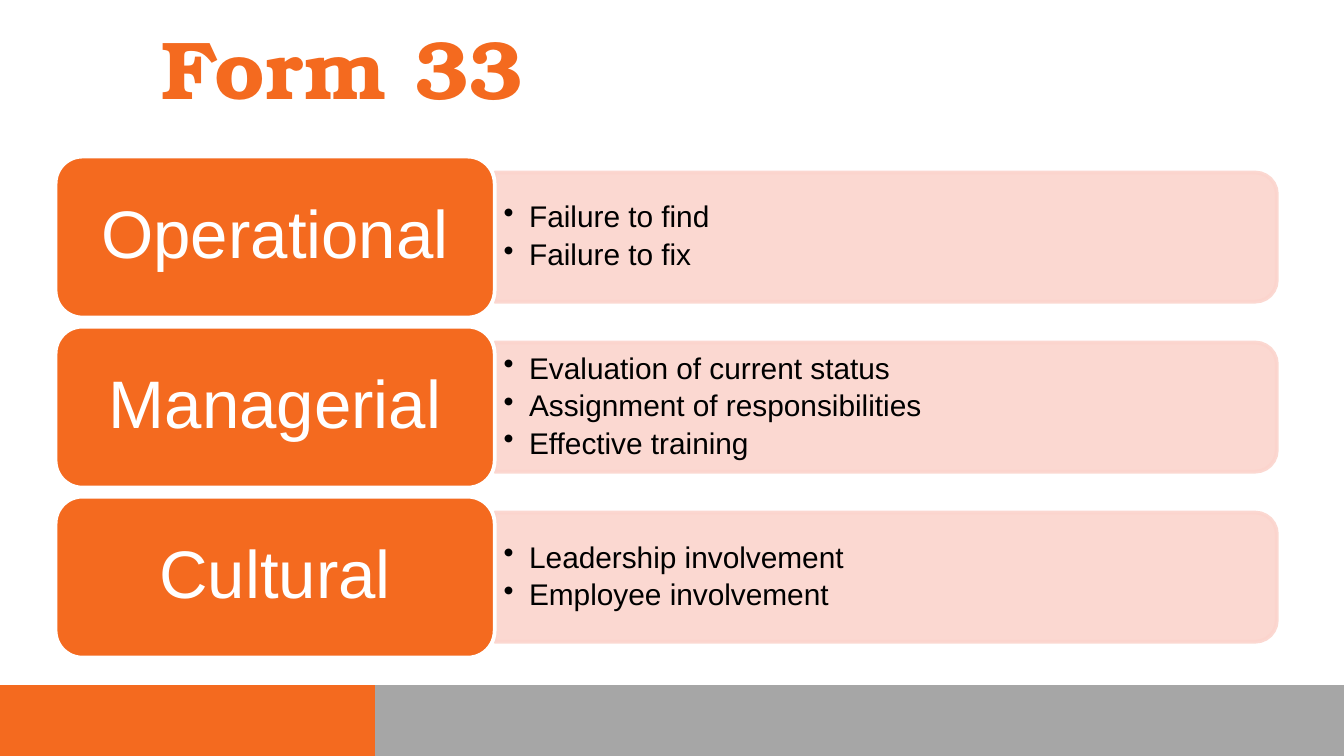
from dataclasses import dataclass

from lxml import etree
from pptx import Presentation
from pptx.dml.color import RGBColor
from pptx.enum.shapes import MSO_SHAPE
from pptx.enum.text import MSO_ANCHOR, PP_ALIGN
from pptx.oxml.ns import qn
from pptx.util import Pt

RECTANGLE = MSO_SHAPE.RECTANGLE
ROUNDED = MSO_SHAPE.ROUNDED_RECTANGLE
ROUNDED_END = MSO_SHAPE.ROUND_2_SAME_RECTANGLE
TOP, MIDDLE = MSO_ANCHOR.TOP, MSO_ANCHOR.MIDDLE
LEFT, CENTER = PP_ALIGN.LEFT, PP_ALIGN.CENTER


@dataclass(frozen=True)
class Theme:
    orange: str = "F46A1F"
    gray: str = "A6A6A6"
    pink: str = "FBD4CD"
    white: str = "FFFFFF"
    black: str = "000000"
    title_font: str = "TeX Gyre Bonum"
    body_font: str = "Arial"
    title_size: int = 44
    label_size: int = 36
    detail_size: int = 16


THEME = Theme()
TITLE = "Form 33"
CATEGORIES = [
    ("Operational", ["Failure to find", "Failure to fix"]),
    ("Managerial", ["Evaluation of current status",
                    "Assignment of responsibilities",
                    "Effective training"]),
    ("Cultural", ["Leadership involvement", "Employee involvement"]),
]

SLIDE_WIDTH, SLIDE_HEIGHT = 720, 405
FOOTER_TOP, FOOTER_SPLIT = 367, 200.9
LABEL_LEFT, LABEL_WIDTH, LABEL_HEIGHT = 29.8, 235.2, 86.2
FIRST_TOP, ROW_PITCH = 83.9, 91.1
PANEL_WIDTH, PANEL_HEIGHT = 419, 69.2
DETAIL_WIDTH, DETAIL_HEIGHT = 415.4, 62.4
BULLET_INDENT = 13.7


def add_block(slide, kind, left, top, width, height, fill, line=None):
    block = slide.shapes.add_shape(kind, Pt(left), Pt(top), Pt(width), Pt(height))
    block.shadow.inherit = False
    block.fill.solid()
    block.fill.fore_color.rgb = RGBColor.from_string(fill)
    if line:
        block.line.color.rgb = RGBColor.from_string(line)
        block.line.width = Pt(2)
    else:
        block.line.fill.background()
    return block


def set_opacity(block, percent):
    for color in block._element.spPr.iter(qn("a:srgbClr")):
        etree.SubElement(color, qn("a:alpha"), val=str(percent * 1000))


def write(block, lines, font, size, color, anchor, align, insets,
          spacing=0.9, after=0, bold=False, bullets=False):
    frame = block.text_frame
    frame.word_wrap = True
    frame.vertical_anchor = anchor
    frame.margin_left = frame.margin_right = Pt(insets[0])
    frame.margin_top = frame.margin_bottom = Pt(insets[1])
    frame.text = "\n".join(lines)
    for paragraph in frame.paragraphs:
        paragraph.alignment = align
        paragraph.line_spacing = spacing
        paragraph.space_after = Pt(after)
        if bullets:
            paragraph.level = 1
            properties = paragraph._p.get_or_add_pPr()
            properties.set("marL", str(Pt(BULLET_INDENT)))
            properties.set("indent", str(-Pt(BULLET_INDENT)))
            etree.SubElement(properties, qn("a:buChar"), char="•")
        for run in paragraph.runs:
            run.font.name = font
            run.font.size = Pt(size)
            run.font.bold = bold
            run.font.color.rgb = RGBColor.from_string(color)


def add_category(slide, top, label, details):
    middle = top + LABEL_HEIGHT / 2
    panel_left = LABEL_LEFT + LABEL_WIDTH
    panel_center = panel_left + PANEL_WIDTH / 2

    panel = add_block(slide, ROUNDED_END, panel_center - PANEL_HEIGHT / 2,
                      middle - PANEL_WIDTH / 2, PANEL_HEIGHT, PANEL_WIDTH,
                      THEME.pink, THEME.pink)
    panel.rotation = 90
    set_opacity(panel, 90)

    detail_box = slide.shapes.add_textbox(
        Pt(panel_left), Pt(middle - DETAIL_HEIGHT / 2),
        Pt(DETAIL_WIDTH), Pt(DETAIL_HEIGHT))
    write(detail_box, details, THEME.body_font, THEME.detail_size, THEME.black,
          MIDDLE, LEFT, (4.8, 2.4), after=2.8, bullets=True)

    label_block = add_block(slide, ROUNDED, LABEL_LEFT, top, LABEL_WIDTH,
                            LABEL_HEIGHT, THEME.orange, THEME.white)
    write(label_block, [label], THEME.body_font, THEME.label_size, THEME.white,
          MIDDLE, CENTER, (10.8, 5.4))


def main():
    presentation = Presentation()
    presentation.slide_width = Pt(SLIDE_WIDTH)
    presentation.slide_height = Pt(SLIDE_HEIGHT)
    slide = presentation.slides.add_slide(presentation.slide_layouts[6])

    footer_height = SLIDE_HEIGHT - FOOTER_TOP
    add_block(slide, RECTANGLE, FOOTER_SPLIT, FOOTER_TOP,
              SLIDE_WIDTH - FOOTER_SPLIT, footer_height, THEME.gray)
    add_block(slide, RECTANGLE, 0, FOOTER_TOP, FOOTER_SPLIT, footer_height,
              THEME.orange)

    title_box = slide.shapes.add_textbox(Pt(79.2), Pt(16.6), Pt(604.8), Pt(67.7))
    write(title_box, [TITLE], THEME.title_font, THEME.title_size, THEME.orange,
          TOP, LEFT, (7.2, 3.6), spacing=Pt(42), bold=True)

    for row, (label, details) in enumerate(CATEGORIES):
        add_category(slide, FIRST_TOP + row * ROW_PITCH, label, details)

    presentation.save("out.pptx")


if __name__ == "__main__":
    main()
